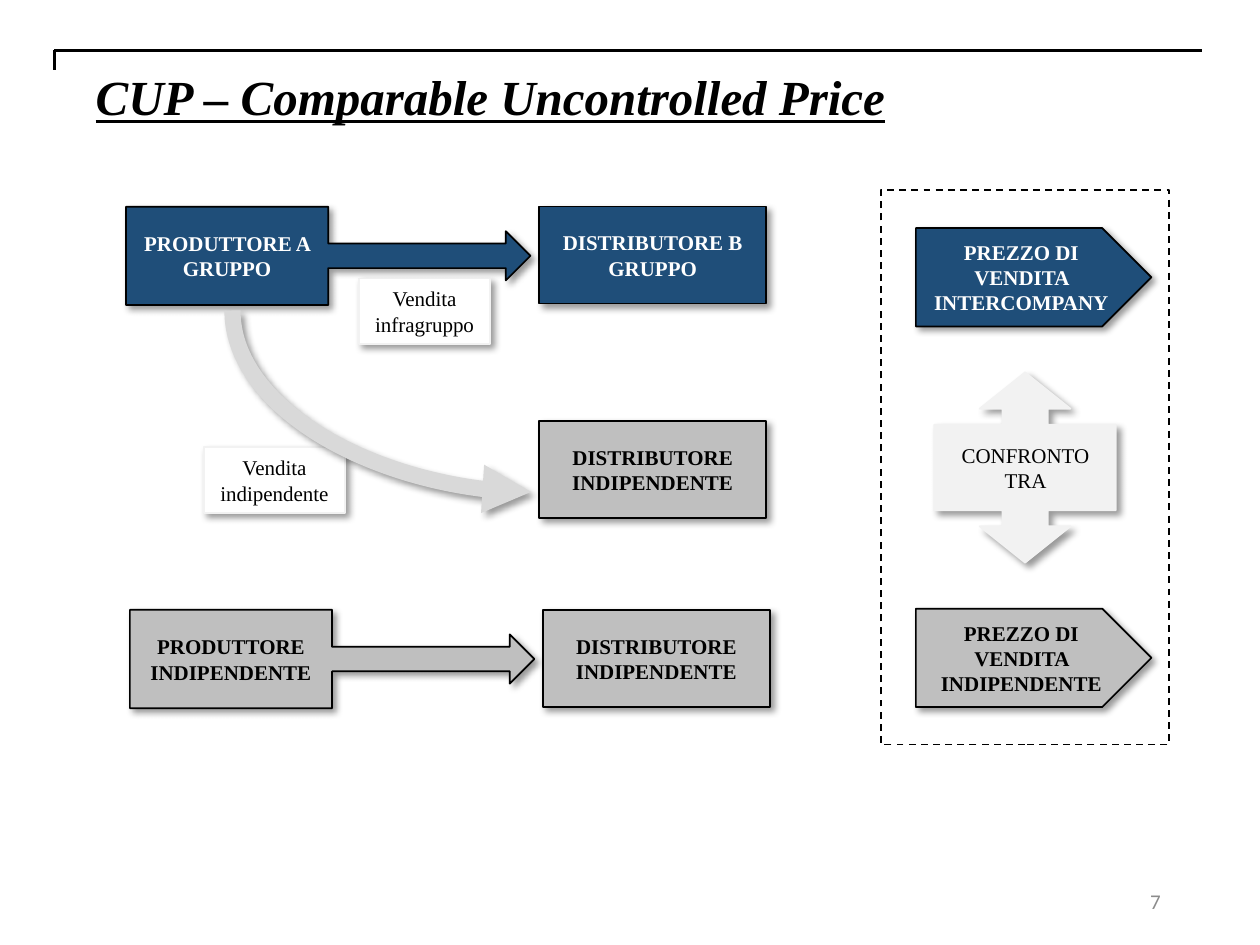
from dataclasses import dataclass
from pptx import Presentation
from pptx.dml.color import RGBColor
from pptx.enum.dml import MSO_LINE
from pptx.enum.shapes import MSO_CONNECTOR, MSO_SHAPE
from pptx.enum.text import MSO_ANCHOR, PP_ALIGN
from pptx.oxml import parse_xml
from pptx.oxml.ns import nsdecls, qn
from pptx.util import Pt


@dataclass(frozen=True)
class Theme:
    black: str = "000000"
    white: str = "FFFFFF"
    navy: str = "1F4E79"
    grey: str = "BFBFBF"
    pale: str = "F2F2F2"
    curve: str = "D9D9D9"
    page: str = "8C8C8C"
    serif: str = "Times New Roman"
    sans: str = "Calibri"
    title_size: int = 28
    body_size: int = 12


def set_all(target, values):
    for name, value in values.items():
        setattr(target, name, value)


class SlideBuilder:
    """Draws the elements of one slide in a shared theme."""

    def __init__(self, slide, theme):
        self.slide = slide
        self.theme = theme

    def letter(self, holder, text, color, align=PP_ALIGN.CENTER, anchor=MSO_ANCHOR.MIDDLE, **font):
        frame = holder.text_frame
        set_all(frame, {"text": text, "word_wrap": True, "vertical_anchor": anchor})
        paragraph = frame.paragraphs[0]
        paragraph.alignment = align
        values = {"name": self.theme.serif, "size": Pt(self.theme.body_size), "bold": False}
        run_font = paragraph.runs[0].font
        set_all(run_font, values | font)
        run_font.color.rgb = RGBColor.from_string(color)

    def stroke(self, line, color, width):
        line.color.rgb = RGBColor.from_string(color)
        line.width = Pt(width)

    def effects(self, properties, shadow):
        for old in properties.findall(qn("a:effectLst")):
            properties.remove(old)
        outer = (
            f'<a:outerShdw blurRad="{Pt(4)}" dist="{Pt(3)}" dir="2700000" algn="tl" rotWithShape="0">'
            f'<a:srgbClr val="{self.theme.black}"><a:alpha val="40000"/></a:srgbClr></a:outerShdw>'
        )
        content = outer if shadow else ""
        properties.append(parse_xml(f'<a:effectLst {nsdecls("a")}>{content}</a:effectLst>'))

    def title(self, text, *box):
        heading = self.slide.shapes.title
        set_all(heading, dict(zip(("left", "top", "width", "height"), map(Pt, box))))
        self.letter(heading, text, self.theme.black, PP_ALIGN.LEFT, MSO_ANCHOR.TOP,
                    size=Pt(self.theme.title_size), bold=True, italic=True, underline=True)

    def shape(self, kind, box, fill, edge, adjustments=(), rotation=0, shadow=True):
        figure = self.slide.shapes.add_shape(kind, *map(Pt, box))
        figure.rotation = rotation
        figure.shadow.inherit = False
        figure.fill.solid()
        figure.fill.fore_color.rgb = RGBColor.from_string(fill)
        self.stroke(figure.line, edge, 1)
        for index, value in enumerate(adjustments):
            figure.adjustments[index] = value
        if shadow:
            self.effects(figure.element.spPr, True)
        return figure

    def party(self, kind, text, box, group=False, adjustments=()):
        fill = self.theme.navy if group else self.theme.grey
        color = self.theme.white if group else self.theme.black
        figure = self.shape(kind, box, fill, self.theme.black, adjustments)
        self.letter(figure, text, color, bold=True)

    def label(self, text, *box):
        figure = self.shape(MSO_SHAPE.RECTANGLE, box, self.theme.white, self.theme.pale)
        self.letter(figure, text, self.theme.black)

    def text(self, text, box, color, **formats):
        caption = self.slide.shapes.add_textbox(*map(Pt, box))
        self.letter(caption, text, color, **formats)

    def rule(self, *ends):
        line = self.slide.shapes.add_connector(MSO_CONNECTOR.STRAIGHT, *map(Pt, ends))
        self.stroke(line.line, self.theme.black, 1.5)
        self.effects(line.element.spPr, False)

    def curved_arrow(self, *ends):
        arrow = self.slide.shapes.add_connector(MSO_CONNECTOR.CURVE, *map(Pt, ends))
        self.stroke(arrow.line, self.theme.curve, 9.25)
        properties = arrow.element.spPr
        properties.find(qn("a:xfrm")).set("rot", "16200000")
        properties.find(qn("a:prstGeom")).set("prst", "curvedConnector2")
        head = parse_xml(f'<a:tailEnd {nsdecls("a")} type="triangle"/>')
        properties.find(qn("a:ln")).append(head)
        self.effects(properties, True)


def main():
    theme = Theme()
    deck = Presentation()
    set_all(deck, {"slide_width": Pt(720), "slide_height": Pt(540)})
    builder = SlideBuilder(deck.slides.add_slide(deck.slide_layouts[5]), theme)

    comparison = builder.shape(MSO_SHAPE.RECTANGLE, (503.3, 108.7, 164.9, 316.8),
                               theme.white, theme.black, shadow=False)
    comparison.line.dash_style = MSO_LINE.DASH
    builder.shape(MSO_SHAPE.LEFT_RIGHT_ARROW_CALLOUT, (531.4, 215.3, 108.7, 103.7),
                  theme.pale, theme.pale, (0.25, 0.25, 0.2, 0.45), rotation=90)
    builder.text("CONFRONTO TRA", (534.2, 249.1, 103.7, 36), theme.black, anchor=MSO_ANCHOR.TOP)

    prices = (
        ("PREZZO DI VENDITA INTERCOMPANY", 130.3, True),
        ("PREZZO DI VENDITA INDIPENDENTE", 347.8, False),
    )
    for price, top, group in prices:
        builder.party(MSO_SHAPE.PENTAGON, price, (523.4, top, 134.6, 56.2), group)

    builder.label("Vendita infragruppo", 205.2, 159.1, 74.9, 37.4)
    builder.label("Vendita indipendente", 116.6, 255.6, 80.6, 37.4)

    producers = (
        ("PRODUTTORE A GRUPPO", 72, 118.1, True),
        ("PRODUTTORE INDIPENDENTE", 74.2, 348.5, False),
    )
    for producer, left, top, group in producers:
        builder.party(MSO_SHAPE.RIGHT_ARROW_CALLOUT, producer, (left, top, 231.1, 56.2),
                      group, (0.25, 0.25, 0.25, 0.5))

    distributors = (
        ("DISTRIBUTORE B GRUPPO", 308.2, 118.1, True),
        ("DISTRIBUTORE INDIPENDENTE", 308.2, 240.5, False),
        ("DISTRIBUTORE INDIPENDENTE", 310.3, 348.5, False),
    )
    for distributor, left, top, group in distributors:
        builder.party(MSO_SHAPE.RECTANGLE, distributor, (left, top, 129.6, 55.4), group)

    builder.curved_arrow(270, 144, 166.3, 314.6)
    builder.title("CUP – Comparable Uncontrolled Price", 47.5, 34.6, 535, 41)
    builder.rule(31, 28.8, 686.9, 28.8)
    builder.rule(31, 28.8, 31, 40.3)
    builder.text("7", (508.3, 500.4, 162, 28.8), theme.page, align=PP_ALIGN.RIGHT, name=theme.sans)

    deck.save("out.pptx")


if __name__ == "__main__":
    main()
